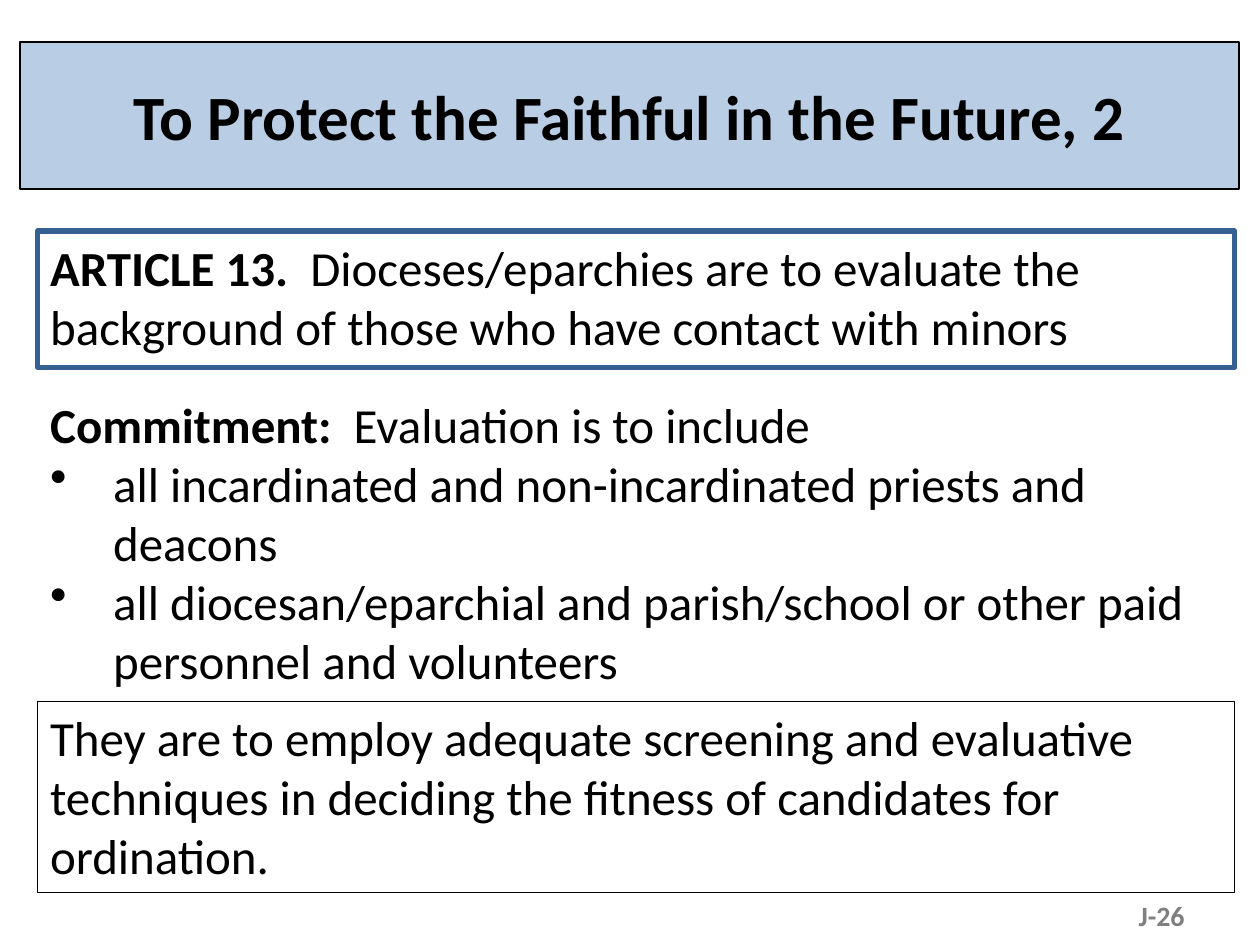
import pptx
import pptx.dml.color
import pptx.enum.shapes
import pptx.enum.text
import pptx.oxml.ns
import pptx.util
import lxml.etree

Pt = pptx.util.Pt
RGBColor = pptx.dml.color.RGBColor
ALIGN = pptx.enum.text.PP_ALIGN
ANCHOR = pptx.enum.text.MSO_ANCHOR

BLACK = RGBColor(0x00, 0x00, 0x00)
GRAY = RGBColor(0x80, 0x80, 0x80)
LIGHT_BLUE = RGBColor(0xB9, 0xCD, 0xE5)
DARK_BLUE = RGBColor(0x37, 0x60, 0x92)
LEFT, WIDTH = 21.6, 684


def write_text(paragraph, text, font="Calibri", size=28, color=BLACK, bold=False):
    run = paragraph.add_run()
    run.text = text
    run.font.name = font
    run.font.size = Pt(size)
    run.font.color.rgb = color
    run.font.bold = bold


class SlideBuilder:
    """Draw boxes, text and bullets on one slide in a shared style."""

    def __init__(self, slide):
        self.slide = slide

    def prepare(self, shape, anchor):
        frame = shape.text_frame
        frame.word_wrap = True
        frame.vertical_anchor = anchor
        return frame

    def box(self, left, top, width, height, line, weight, fill=None,
            anchor=ANCHOR.TOP, align=ALIGN.LEFT):
        rectangle = pptx.enum.shapes.MSO_SHAPE.RECTANGLE
        shape = self.slide.shapes.add_shape(
            rectangle, Pt(left), Pt(top), Pt(width), Pt(height))
        shape.shadow.inherit = False
        shape.line.color.rgb = line
        shape.line.width = Pt(weight)
        if fill is None:
            shape.fill.background()
        else:
            shape.fill.solid()
            shape.fill.fore_color.rgb = fill
        paragraph = self.prepare(shape, anchor).paragraphs[0]
        paragraph.alignment = align
        return paragraph

    def text_box(self, left, top, width, height, anchor=ANCHOR.TOP):
        shape = self.slide.shapes.add_textbox(Pt(left), Pt(top), Pt(width), Pt(height))
        return self.prepare(shape, anchor)

    def hang(self, paragraph, indent=36, bullet=None):
        properties = paragraph._p.get_or_add_pPr()
        properties.set("marL", str(int(Pt(indent))))
        properties.set("indent", str(int(Pt(-indent))))
        if bullet:
            mark = lxml.etree.SubElement(properties, pptx.oxml.ns.qn("a:buChar"))
            mark.set("char", bullet)


def main():
    presentation = pptx.Presentation()
    presentation.slide_width, presentation.slide_height = Pt(720), Pt(540)
    slide = presentation.slides.add_slide(presentation.slide_layouts[6])
    builder = SlideBuilder(slide)

    title = builder.box(11.5, 24, 696.5, 84, BLACK, 0.75, fill=LIGHT_BLUE,
                        anchor=ANCHOR.MIDDLE, align=ALIGN.CENTER)
    write_text(title, "To Protect the Faithful in the Future, 2", size=36, bold=True)

    article = builder.box(LEFT, 132, WIDTH, 78, DARK_BLUE, 3)
    write_text(article, "ARTICLE 13.  ", bold=True)
    write_text(article, "Dioceses/eparchies are to evaluate the background "
                        "of those who have contact with minors")

    page_number = builder.text_box(516, 508.5, 168, 28.8, ANCHOR.MIDDLE).paragraphs[0]
    page_number.alignment = ALIGN.RIGHT
    write_text(page_number, "J-26", size=16, color=GRAY, bold=True)

    screening = builder.box(LEFT, 401, WIDTH, 109, BLACK, 0.75)
    write_text(screening, "They are to employ adequate screening and evaluative "
                          "techniques in deciding the fitness of candidates for ordination.")

    commitment = builder.text_box(LEFT, 222, WIDTH, 177)
    heading = commitment.paragraphs[0]
    builder.hang(heading)
    write_text(heading, "Commitment:  ", bold=True)
    write_text(heading, "Evaluation is to include")
    for group in (
        "all incardinated and non-incardinated priests and deacons",
        "all diocesan/eparchial and parish/school or other paid personnel and volunteers",
    ):
        paragraph = commitment.add_paragraph()
        builder.hang(paragraph, bullet="•")
        write_text(paragraph, group)

    presentation.save("out.pptx")


if __name__ == "__main__":
    main()
